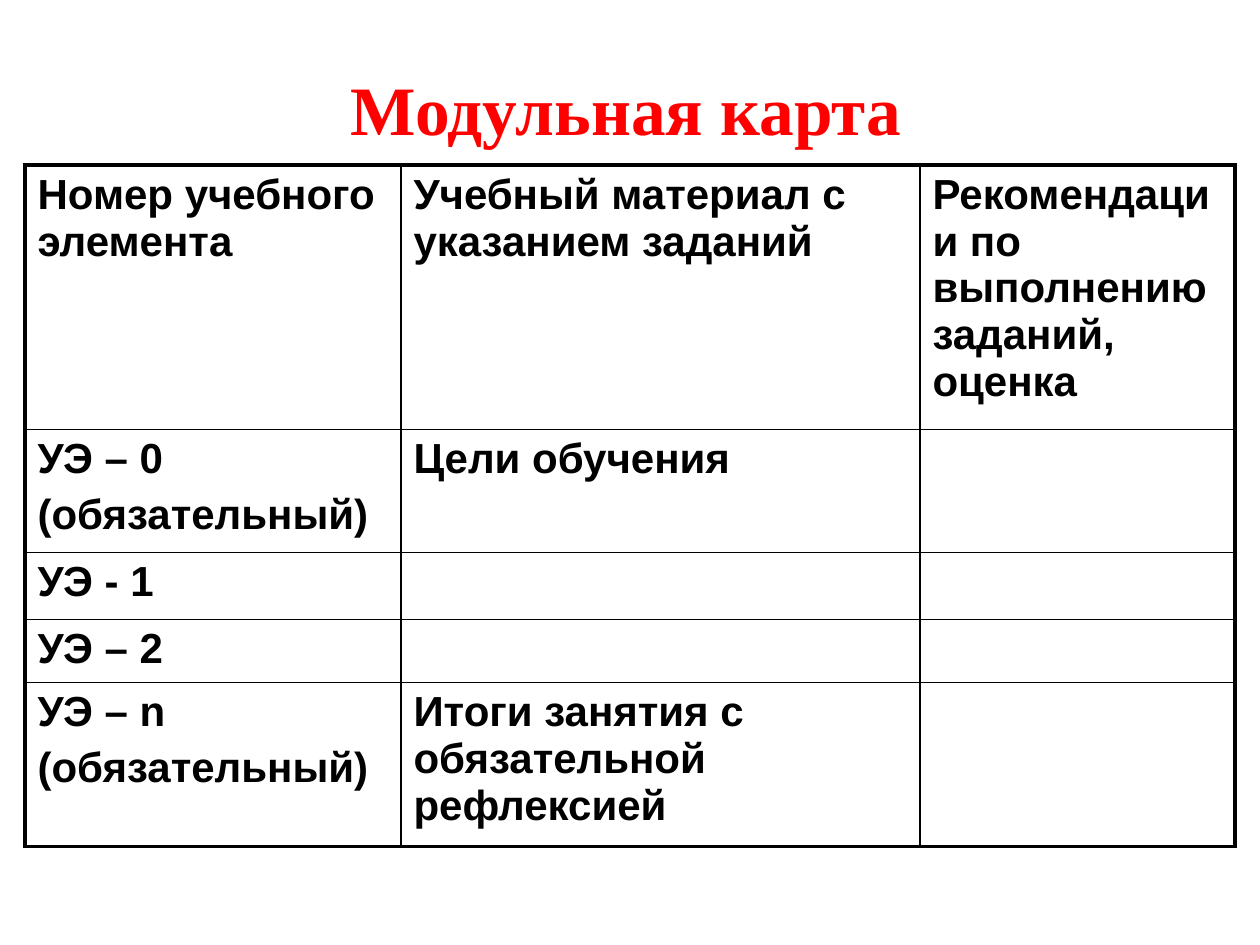
from pptx import Presentation
from pptx.dml.color import RGBColor
from pptx.enum.text import MSO_ANCHOR, PP_ALIGN
from pptx.oxml.ns import qn
from pptx.util import Pt
from lxml.etree import SubElement

# Content: one list per row, one tuple of paragraphs per cell
TITLE = "Модульная карта"
ROWS = [
    [("Номер учебного элемента",), ("Учебный материал с указанием заданий",),
     ("Рекомендации по выполнению заданий, оценка",)],
    [("УЭ – 0", "(обязательный)"), ("Цели обучения",), ()],
    [("УЭ - 1",), (), ()],
    [("УЭ – 2",), (), ()],
    [("УЭ – n", "(обязательный)"), ("Итоги занятия с обязательной рефлексией",), ()],
]
COLORS = {"title": "FF0000", "ink": "000000"}

# Layout in px
SLIDE = (1260, 945)
TITLE_BOX = (59, 59, 1134, 97)
TABLE_AT = (25, 165)
COL_WIDTHS = [376, 519, 315]
ROW_HEIGHTS = [123, 123, 67, 61, 123]
THIN, THICK = 1, 2.25


def px(n):
    return round(n * 914400 / 126)


def set_font(paragraph, name, size, color):
    font = paragraph.font
    font.name, font.size, font.bold = name, Pt(size), True
    font.color.rgb = RGBColor.from_string(COLORS[color])


def set_borders(cell, widths):
    props = cell._tc.get_or_add_tcPr()
    for i, (side, width) in enumerate(widths.items()):
        line = props.makeelement(qn(f"a:ln{side}"), {"w": str(Pt(width))})
        fill = SubElement(line, qn("a:solidFill"))
        SubElement(fill, qn("a:srgbClr"), val=COLORS["ink"])
        props.insert(i, line)


prs = Presentation()
prs.slide_width, prs.slide_height = map(px, SLIDE)
slide = prs.slides.add_slide(prs.slide_layouts[6])

# Title
title = slide.shapes.add_textbox(*map(px, TITLE_BOX)).text_frame
title.word_wrap = True
title.vertical_anchor = MSO_ANCHOR.MIDDLE
heading = title.paragraphs[0]
heading.text = TITLE
heading.alignment = PP_ALIGN.CENTER
set_font(heading, "Times New Roman", 39.6, "title")

# Module table
size = (sum(COL_WIDTHS), sum(ROW_HEIGHTS))
table = slide.shapes.add_table(len(ROWS), len(COL_WIDTHS),
                               *map(px, TABLE_AT + size)).table
table.first_row = table.horz_banding = False
for column, width in zip(table.columns, COL_WIDTHS):
    column.width = px(width)
for row, height in zip(table.rows, ROW_HEIGHTS):
    row.height = px(height)

last_row, last_col = len(ROWS) - 1, len(COL_WIDTHS) - 1
for r, row in enumerate(ROWS):
    for c, lines in enumerate(row):
        cell = table.cell(r, c)
        cell.fill.background()
        set_borders(cell, {
            "L": THICK if c == 0 else THIN,
            "R": THICK if c == last_col else THIN,
            "T": THICK if r == 0 else THIN,
            "B": THICK if r == last_row else THIN,
        })
        cell.text = "\n".join(lines)
        for i, paragraph in enumerate(cell.text_frame.paragraphs):
            set_font(paragraph, "Arial", 24, "ink")
            if i:
                paragraph.space_before = Pt(5)

prs.save("out.pptx")
